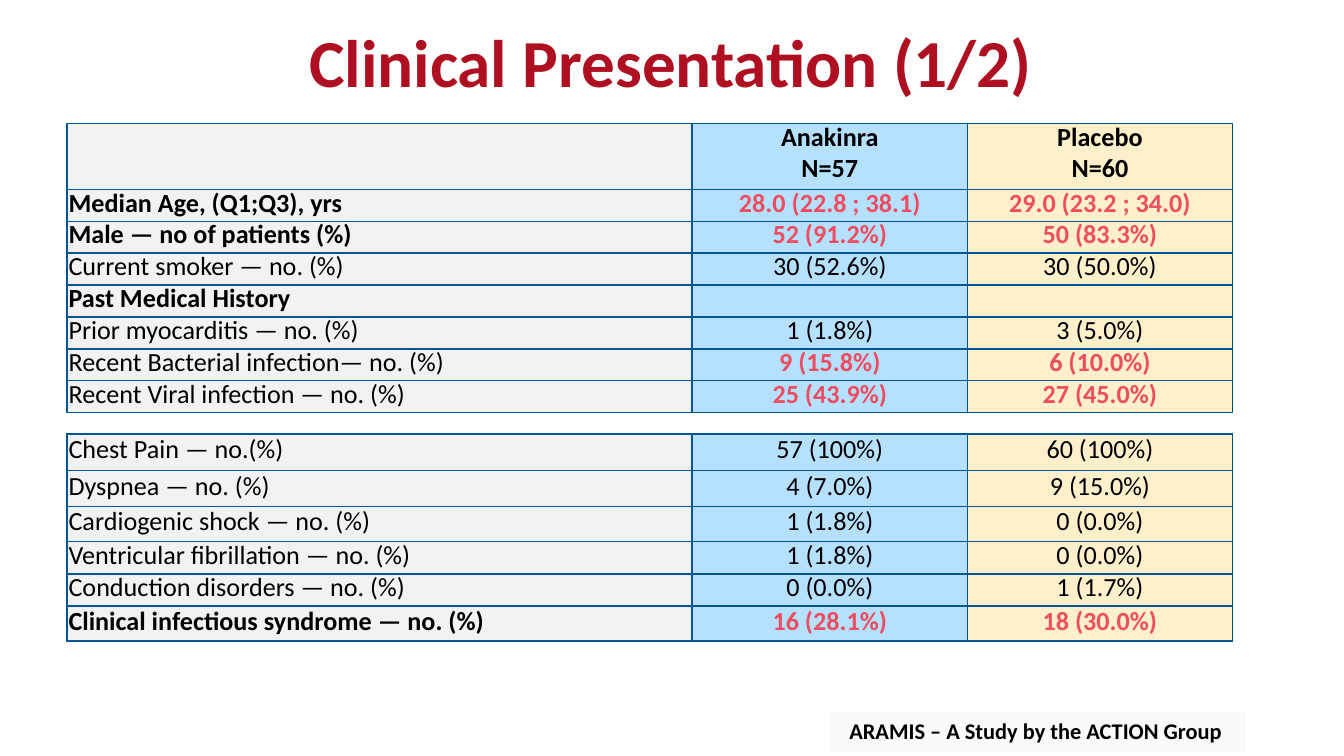
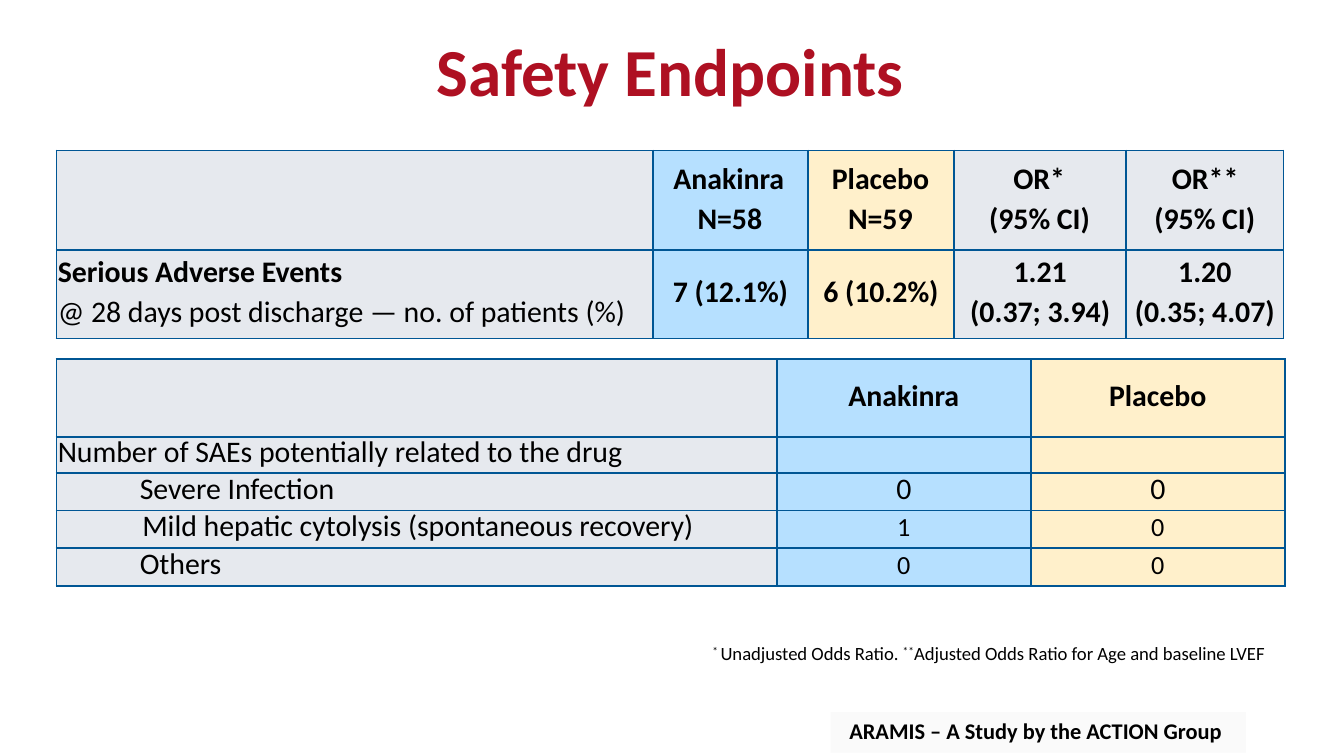
from dataclasses import dataclass, replace

import pptx
import pptx.dml.color
import pptx.enum.shapes
import pptx.enum.text
import pptx.oxml
import pptx.oxml.ns
import pptx.util

Inches = pptx.util.Inches
Pt = pptx.util.Pt
ALIGN = pptx.enum.text.PP_ALIGN

FONT = "Calibri"
COLORS = {
    "text": "000000",
    "title": "AE1022",
    "highlight": "EF4D60",
    "border": "005694",
    "anakinra": "B6E0FF",
    "placebo": "FFF0CB",
    "light_gray": "F2F2F2",
    "cool_gray": "E6E9EE",
    "footer": "FAFAFA",
}


@dataclass(frozen=True)
class Style:
    size: float = 14
    bold: bool = False
    color: str = "text"
    align: object = ALIGN.LEFT
    leading: object = None  # points, or None for proportional spacing
    multiple: float = 1.0
    before: float = 0
    top: float = 0
    indent: float = 0
    first_line: float = 0
    baseline: int = 0


# Text styles of the tables
LABEL = Style(leading=15.8, indent=0.01)
LABEL_BOLD = replace(LABEL, bold=True)
VALUE = Style(leading=15.8, align=ALIGN.CENTER)
VALUE_BOLD = replace(VALUE, bold=True, before=1.2)
VALUE_RED = replace(VALUE, bold=True, color="highlight")
LARGE = Style(size=16, indent=0.01)
LARGE_BOLD = Style(size=16, bold=True, align=ALIGN.CENTER)


def rgb(name):
    return pptx.dml.color.RGBColor.from_string(COLORS[name])


def add_run(paragraph, text, style):
    run = paragraph.add_run()
    run.text = text
    run.font.name = FONT
    run.font.size = Pt(style.size)
    run.font.bold = style.bold
    run.font.color.rgb = rgb(style.color)
    if style.baseline:
        run.font._element.set("baseline", str(style.baseline * 1000))


def format_paragraph(paragraph, style, first=True):
    paragraph.alignment = style.align
    properties = paragraph._p.get_or_add_pPr()
    properties.set("marL", str(Inches(style.indent)))
    properties.set("indent", str(Inches(style.first_line)))
    paragraph.line_spacing = Pt(style.leading) if style.leading else style.multiple
    paragraph.space_before = Pt(0 if first else style.before)


def set_margins(frame, top):
    frame.margin_left = frame.margin_right = frame.margin_bottom = 0
    frame.margin_top = Inches(top)


def fill_frame(shape, runs):
    frame = shape.text_frame
    frame.word_wrap = True
    frame.auto_size = pptx.enum.text.MSO_AUTO_SIZE.SHAPE_TO_FIT_TEXT
    frame.vertical_anchor = pptx.enum.text.MSO_ANCHOR.TOP
    set_margins(frame, 0.01)
    paragraph = frame.paragraphs[0]
    format_paragraph(paragraph, runs[0][1])
    for text, style in runs:
        add_run(paragraph, text, style)


def add_title(slide, text, left, top, width, indent):
    title = slide.shapes.title
    title.left, title.top = Inches(left), Inches(top)
    title.width, title.height = Inches(width), Inches(0.63)
    style = Style(size=36, bold=True, color="title", indent=indent)
    fill_frame(title, [(text, style)])


def add_text(slide, left, top, width, height, runs):
    box = slide.shapes.add_textbox(
        Inches(left), Inches(top), Inches(width), Inches(height))
    fill_frame(box, runs)


def add_footer(slide):
    add_text(slide, 6.31, 5.33, 2.81, 0.23,
             [("ARAMIS – A Study by the ACTION Group",
               Style(size=12, bold=True, indent=0.01))])


def add_footer_band(layout, slide):
    """Draw the band, then move it to the layout so all slides share it."""
    band = slide.shapes.add_shape(
        pptx.enum.shapes.MSO_SHAPE.RECTANGLE,
        Inches(6.18), Inches(5.3), Inches(3.09), Inches(0.3))
    band.shadow.inherit = False
    band.fill.solid()
    band.fill.fore_color.rgb = rgb("footer")
    band.line.fill.background()
    layout.shapes._spTree.append(band._element)


def add_borders(cell):
    properties = cell._tc.get_or_add_tcPr()
    for side in ("lnL", "lnR", "lnT", "lnB"):
        properties.append(pptx.oxml.parse_xml(
            f'<a:{side} {pptx.oxml.ns.nsdecls("a")} w="12700"><a:solidFill>'
            f'<a:srgbClr val="{COLORS["border"]}"/></a:solidFill></a:{side}>'))


def fill_cell(cell, lines, fill):
    add_borders(cell)
    cell.fill.solid()
    cell.fill.fore_color.rgb = rgb(fill)
    set_margins(cell, lines[0][1].top)
    frame = cell.text_frame
    for number, (text, style) in enumerate(lines):
        paragraph = frame.add_paragraph() if number else frame.paragraphs[0]
        format_paragraph(paragraph, style, first=number == 0)
        if text:
            add_run(paragraph, text, style)
        else:
            paragraph._p.get_or_add_endParaRPr().set("sz", "1000")


def table_row(height, label, label_style, values, value_style):
    """Return a row; a newline in a value starts a paragraph."""
    cells = [[(label, label_style)]]
    for value in values:
        cells.append([(line, value_style) for line in value.split("\n")])
    return height, cells


def add_table(slide, left, top, width, height, columns, fills, rows):
    shape = slide.shapes.add_table(
        len(rows), len(columns), Inches(left), Inches(top),
        Inches(width), Inches(height))
    table = shape.table
    table.first_row = table.horz_banding = False
    for column, column_width in zip(table.columns, columns):
        column.width = Inches(column_width)
    for row, (row_height, cells) in zip(table.rows, rows):
        row.height = Inches(row_height)
        for cell, lines, fill in zip(row.cells, cells, fills):
            fill_cell(cell, lines, fill)
    shape.width, shape.height = Inches(width), Inches(height)


def build_clinical_presentation(slide):
    add_title(slide, "Clinical Presentation (1/2)", 2.29, 0.14, 5.44, 0.01)
    columns = [4.65, 2.05, 1.97]
    fills = ["light_gray", "anakinra", "placebo"]

    # Demographics and history
    history = [
        ("Median Age, (Q1;Q3), yrs", LABEL_BOLD,
         ["28.0 (22.8 ; 38.1)", "29.0 (23.2 ; 34.0)"], VALUE_RED),
        ("Male — no of patients (%)", LABEL_BOLD,
         ["52 (91.2%)", "50 (83.3%)"], VALUE_RED),
        ("Current smoker — no. (%)", LABEL, ["30 (52.6%)", "30 (50.0%)"], VALUE),
        ("Past Medical History", LABEL_BOLD, ["", ""], VALUE),
        ("Prior myocarditis — no. (%)", LABEL, ["1 (1.8%)", "3 (5.0%)"], VALUE),
        ("Recent Bacterial infection— no. (%)", LABEL,
         ["9 (15.8%)", "6 (10.0%)"], VALUE_RED),
        ("Recent Viral infection — no. (%)", LABEL,
         ["25 (43.9%)", "27 (45.0%)"], VALUE_RED),
    ]
    height, header_height = 2.15, 0.49
    row_height = (height - header_height) / len(history)
    header = table_row(header_height, "", LABEL,
                       ["Anakinra\nN=57", "Placebo\nN=60"], VALUE_BOLD)
    add_table(slide, 0.5, 0.92, 8.76, height, columns, fills,
              [header] + [table_row(row_height, *entry) for entry in history])
    add_footer(slide)

    # Symptoms: height, line spacing, label, values
    symptoms = [
        (0.27, None, "Chest Pain — no.(%)", ["57 (100%)", "60 (100%)"]),
        (0.27, None, "Dyspnea — no. (%)", ["4 (7.0%)", "9 (15.0%)"]),
        (0.26, 16.6, "Cardiogenic shock — no. (%)", ["1 (1.8%)", "0 (0.0%)"]),
        (0.24, 15.9, "Ventricular fibrillation — no. (%)", ["1 (1.8%)", "0 (0.0%)"]),
        (0.24, 15.9, "Conduction disorders — no. (%)", ["0 (0.0%)", "1 (1.7%)"]),
    ]
    rows = [
        table_row(height, label, replace(LABEL, leading=leading),
                  values, replace(VALUE, leading=leading))
        for height, leading, label, values in symptoms
    ]
    rows.append(table_row(
        0.26, "Clinical infectious syndrome — no. (%)",
        replace(LABEL_BOLD, leading=16.6),
        ["16 (28.1%)", "18 (30.0%)"], replace(VALUE_RED, leading=16.6)))
    add_table(slide, 0.5, 3.23, 8.76, 1.54, columns, fills, rows)


def build_safety_endpoints(slide):
    add_title(slide, "Safety Endpoints", 1.55, 0.21, 6.91, 1.7)
    add_footer(slide)

    # Serious adverse events: header text, indent, first line
    headings = [
        ("Anakinra N=58", 0.33, -0.18),
        ("Placebo N=59", 0.3, -0.12),
        ("OR* (95% CI)", 0.26, 0.18),
        ("OR** (95% CI)", 0.21, 0.13),
    ]
    header_style = replace(LARGE_BOLD, align=ALIGN.LEFT, multiple=1.1, top=0.05)
    event_style = replace(LARGE_BOLD, before=1.9, top=0.03)
    count_style = replace(LARGE_BOLD, top=0.18)
    header = (0.74, [[("", LARGE)]] + [
        [(text, replace(header_style, indent=indent, first_line=first_line))]
        for text, indent, first_line in headings])
    events = (0.66, [
        [("Serious Adverse Events", replace(LARGE, bold=True, top=0.03)),
         ("@ 28 days post discharge — no. of patients (%)",
          replace(LARGE, before=1.9))],
        [("7 (12.1%)", count_style)],
        [("6 (10.2%)", count_style)],
        [("1.21", event_style), ("(0.37; 3.94)", event_style)],
        [("1.20", event_style), ("(0.35; 4.07)", event_style)],
    ])
    add_table(slide, 0.42, 1.12, 9.24, 1.39, [4.44, 1.15, 1.09, 1.28, 1.17],
              ["cool_gray", "anakinra", "placebo", "cool_gray", "cool_gray"],
              [header, events])

    # Events related to the drug
    label = replace(LARGE, leading=18.4)
    nested = replace(label, indent=0.62)
    centered = replace(label, align=ALIGN.CENTER, indent=0)
    small = Style(align=ALIGN.CENTER, top=0.01)
    rows = [
        table_row(0.58, "", LARGE, ["Anakinra", "Placebo"],
                  replace(LARGE_BOLD, top=0.14)),
        table_row(0.27, "Number of SAEs potentially related to the drug",
                  replace(label, leading=18.1), ["", ""], centered),
        table_row(0.28, "Severe Infection", nested, ["0", "0"], centered),
        table_row(0.28, "Mild hepatic cytolysis (spontaneous recovery)",
                  replace(centered, indent=0.02), ["1", "0"], small),
        table_row(0.28, "Others", nested, ["0", "0"], small),
    ]
    add_table(slide, 0.42, 2.67, 9.24, 1.69, [5.36, 1.89, 1.89],
              ["cool_gray", "anakinra", "placebo"], rows)

    # Footnote
    mark = Style(size=10.5, baseline=24, indent=0.04)
    note = Style(size=10)
    add_text(slide, 5.26, 4.76, 4.28, 0.19, [
        ("* ", mark),
        ("Unadjusted Odds Ratio. ", note),
        ("**", mark),
        ("Adjusted Odds Ratio for Age and baseline LVEF", note),
    ])


def main():
    presentation = pptx.Presentation()
    presentation.slide_width = Inches(10)
    presentation.slide_height = presentation.slide_width * 9 // 16
    layout = presentation.slide_layouts[5]
    slides = [presentation.slides.add_slide(layout) for _ in range(2)]
    add_footer_band(layout, slides[0])
    build_clinical_presentation(slides[0])
    build_safety_endpoints(slides[1])
    presentation.save("out.pptx")


if __name__ == "__main__":
    main()
